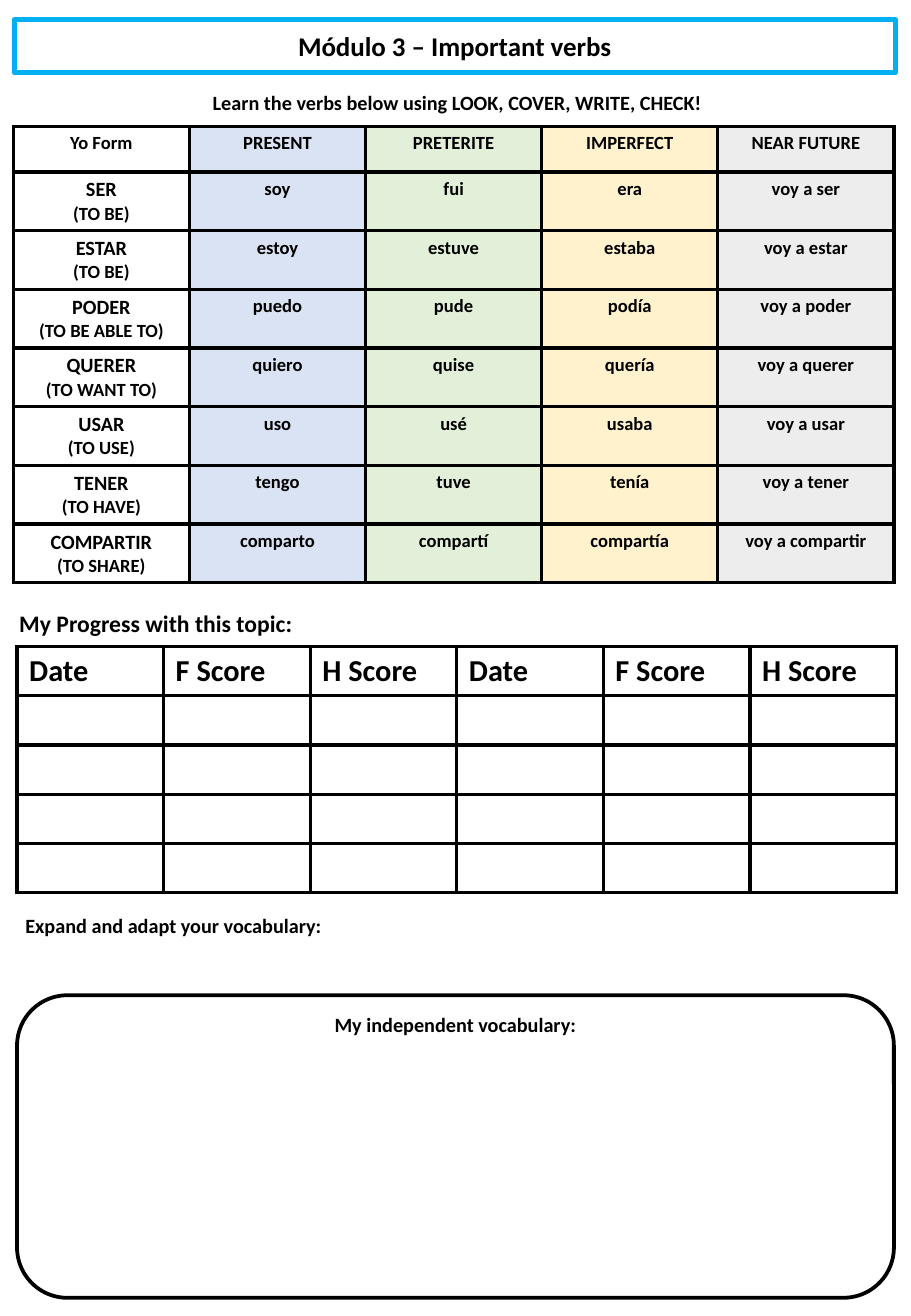
from dataclasses import dataclass
from typing import Optional

from lxml import etree
from pptx import Presentation
from pptx import util as u
from pptx.dml.color import RGBColor
from pptx.enum import shapes, text
from pptx.oxml import ns

FONT = "Calibri"
BLACK = RGBColor(0x00, 0x00, 0x00)
WHITE = RGBColor(0xFF, 0xFF, 0xFF)
SKY = RGBColor(0x00, 0xB0, 0xF0)
PALE_BLUE = RGBColor(0xDA, 0xE3, 0xF3)
PALE_GREEN = RGBColor(0xE2, 0xF0, 0xD9)
PALE_YELLOW = RGBColor(0xFF, 0xF2, 0xCC)
PALE_GREY = RGBColor(0xED, 0xED, 0xED)

LEFT = text.PP_ALIGN.LEFT
CENTER = text.PP_ALIGN.CENTER
RULE = u.Pt(2.25)


@dataclass
class Box:
    left: float
    top: float
    width: float
    height: float

    def points(self) -> tuple:
        return tuple(u.Pt(v) for v in (self.left, self.top, self.width, self.height))


@dataclass
class Label:
    words: str
    box: Box
    size: float
    align: text.PP_ALIGN = LEFT


@dataclass
class Verb:
    name: str
    meaning: str
    forms: tuple


TITLE_BOX = Box(8.6, 11.5, 522, 31.7)
VERB_BOX = Box(7.9, 74.9, 522, 270.6)
SCORE_BOX = Box(10.1, 383, 521.4, 146)
VOCABULARY_BOX = Box(10.1, 589.7, 519.8, 179.3)

LABELS = (
    Label("Learn the verbs below using LOOK, COVER, WRITE, CHECK!",
          Box(10.1, 49.7, 522, 36), 12, CENTER),
    Label("My Progress with this topic:", Box(4.3, 357.1, 282.2, 24.5), 14),
    Label("Expand and adapt your vocabulary:", Box(7.9, 537.8, 438.5, 21.6), 12),
)

TENSES = ("Yo Form", "PRESENT", "PRETERITE", "IMPERFECT", "NEAR FUTURE")
TENSE_FILLS = (None, PALE_BLUE, PALE_GREEN, PALE_YELLOW, PALE_GREY)
VERBS = (
    Verb("SER", "(TO BE)", ("soy", "fui", "era", "voy a ser")),
    Verb("ESTAR", "(TO BE)", ("estoy", "estuve", "estaba", "voy a estar")),
    Verb("PODER", "(TO BE ABLE TO)", ("puedo", "pude", "podía", "voy a poder")),
    Verb("QUERER", "(TO WANT TO)", ("quiero", "quise", "quería", "voy a querer")),
    Verb("USAR", "(TO USE)", ("uso", "usé", "usaba", "voy a usar")),
    Verb("TENER", "(TO HAVE)", ("tengo", "tuve", "tenía", "voy a tener")),
    Verb("COMPARTIR", "(TO SHARE)",
         ("comparto", "compartí", "compartía", "voy a compartir")),
)
SCORE_HEADINGS = ("Date", "F Score", "H Score") * 2


def write(frame, words: str, *, size: float, align: text.PP_ALIGN = LEFT,
          extra: bool = False) -> None:
    """Write one bold paragraph, added after the others when extra is set."""
    paragraph = frame.add_paragraph() if extra else frame.paragraphs[0]
    paragraph.alignment = align
    run = paragraph.add_run()
    run.text = words
    run.font.name = FONT
    run.font.size = u.Pt(size)
    run.font.bold = True
    run.font.color.rgb = BLACK


def format_cell(cell, fill: Optional[RGBColor]) -> None:
    cell.margin_top = cell.margin_bottom = u.Pt(3.4)
    if fill is None:
        cell.fill.background()
    else:
        cell.fill.solid()
        cell.fill.fore_color.rgb = fill
    properties = cell._tc.get_or_add_tcPr()
    for position, side in enumerate(("lnL", "lnR", "lnT", "lnB")):
        line = etree.Element(ns.qn(f"a:{side}"), w=str(RULE))
        solid = etree.SubElement(line, ns.qn("a:solidFill"))
        etree.SubElement(solid, ns.qn("a:srgbClr"), val=str(BLACK))
        properties.insert(position, line)


def add_grid(slide, box: Box, heights: list[float], fills: tuple):
    table = slide.shapes.add_table(len(heights), len(fills), *box.points()).table
    table.first_row = table.horz_banding = False
    for column in table.columns:
        column.width = u.Pt(box.width / len(fills))
    for row, height in zip(table.rows, heights):
        row.height = u.Pt(height)
        for cell, fill in zip(row.cells, fills):
            format_cell(cell, fill)
    return table


def add_title(slide, words: str) -> None:
    title = slide.shapes.title
    title.left, title.top, title.width, title.height = TITLE_BOX.points()
    outline = etree.Element(ns.qn("a:prstGeom"), prst="roundRect")
    etree.SubElement(outline, ns.qn("a:avLst"))
    title.element.spPr.insert(1, outline)
    title.fill.solid()
    title.fill.fore_color.rgb = WHITE
    title.line.color.rgb = SKY
    title.line.width = u.Pt(3)
    title.text_frame.auto_size = text.MSO_AUTO_SIZE.NONE
    title.text_frame.vertical_anchor = text.MSO_ANCHOR.MIDDLE
    write(title.text_frame, words, size=16, align=CENTER)


def add_label(slide, label: Label) -> None:
    frame = slide.shapes.add_textbox(*label.box.points()).text_frame
    frame.word_wrap = True
    write(frame, label.words, size=label.size, align=label.align)


def add_verb_table(slide) -> None:
    table = add_grid(slide, VERB_BOX, [27] + [34.8] * len(VERBS), TENSE_FILLS)
    for column, tense in enumerate(TENSES):
        write(table.cell(0, column).text_frame, tense, size=11, align=CENTER)
    for row, verb in enumerate(VERBS, start=1):
        name_frame = table.cell(row, 0).text_frame
        write(name_frame, verb.name, size=12, align=CENTER)
        write(name_frame, verb.meaning, size=11, align=CENTER, extra=True)
        for column, form in enumerate(verb.forms, start=1):
            write(table.cell(row, column).text_frame, form, size=11, align=CENTER)


def add_score_table(slide) -> None:
    table = add_grid(slide, SCORE_BOX, [SCORE_BOX.height / 5] * 5,
                     (None,) * len(SCORE_HEADINGS))
    for column, heading in enumerate(SCORE_HEADINGS):
        write(table.cell(0, column).text_frame, heading, size=18)


def add_vocabulary_box(slide) -> None:
    shape = slide.shapes.add_shape(shapes.MSO_SHAPE.ROUNDED_RECTANGLE,
                                   *VOCABULARY_BOX.points())
    shape.shadow.inherit = False
    shape.fill.background()
    shape.line.color.rgb = BLACK
    shape.line.width = RULE
    shape.text_frame.vertical_anchor = text.MSO_ANCHOR.TOP
    shape.text_frame.margin_top = u.Pt(1.3)
    write(shape.text_frame, "My independent vocabulary:", size=12, align=CENTER)


def main() -> None:
    presentation = Presentation()
    presentation.slide_width = u.Pt(540)
    presentation.slide_height = u.Pt(779.76)
    slide = presentation.slides.add_slide(presentation.slide_layouts[5])

    # Heading and section labels
    add_title(slide, "Módulo 3 – Important verbs")
    for label in LABELS:
        add_label(slide, label)

    # Verb forms and progress record
    add_verb_table(slide)
    add_score_table(slide)

    # Space for the learner's own words
    add_vocabulary_box(slide)
    presentation.save("out.pptx")


if __name__ == "__main__":
    main()
